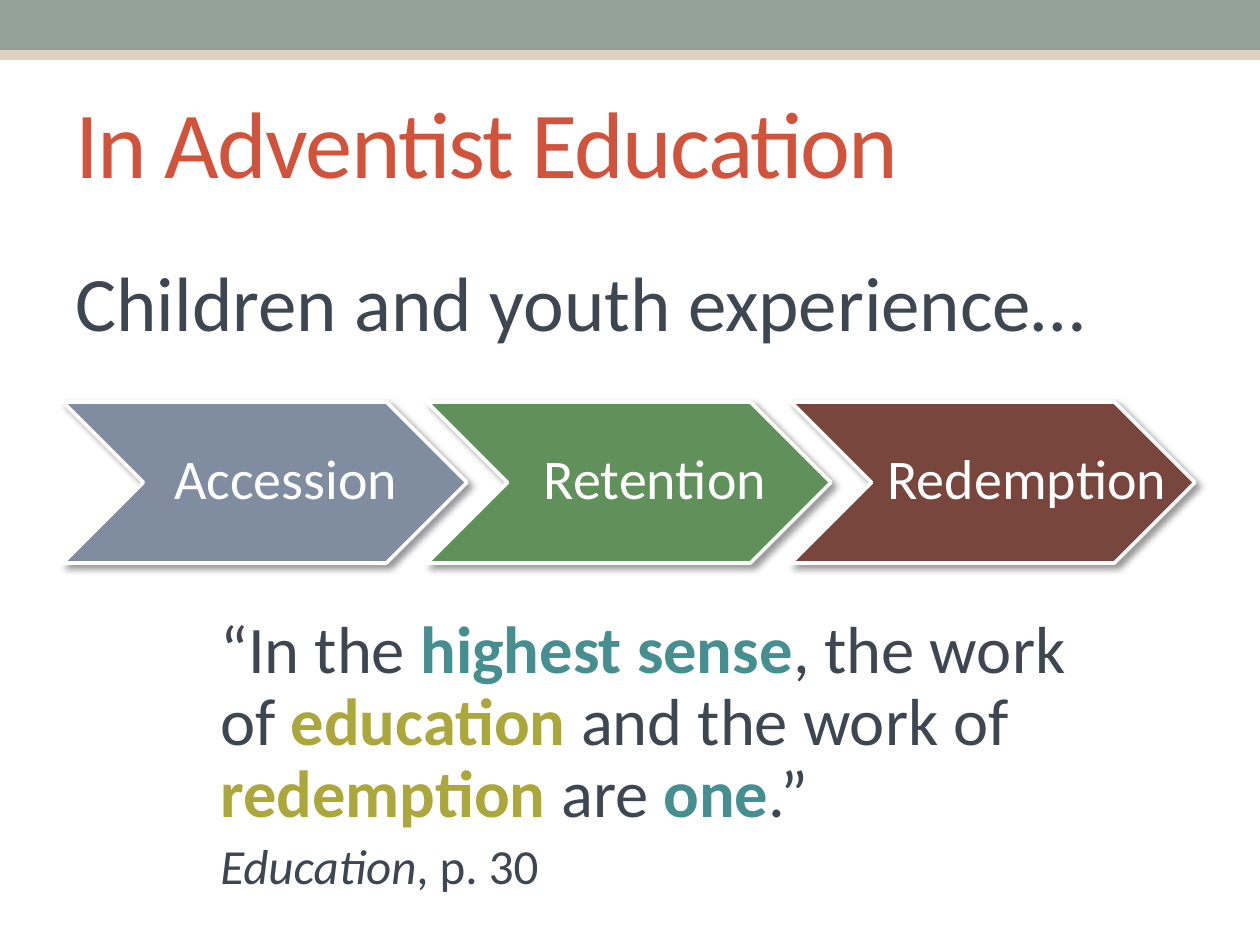
from lxml import etree
from pptx import Presentation
from pptx import util as u
from pptx.dml.color import RGBColor
from pptx.enum import shapes, text
from pptx.oxml.ns import qn

PX = u.Inches(1) / 126
FONT = "Calibri"

WHITE = RGBColor(0xFF, 0xFF, 0xFF)
BLACK = RGBColor(0, 0, 0)
SAGE = RGBColor(0x93, 0xA2, 0x99)
SAND = RGBColor(0xDE, 0xD2, 0xC2)
ORANGE = RGBColor(0xD2, 0x53, 0x3C)
SLATE = RGBColor(0x3E, 0x46, 0x52)
TEAL = RGBColor(0x45, 0x8F, 0x91)
OLIVE = RGBColor(0xAC, 0xA7, 0x3B)
BLUE_GREY = RGBColor(0x80, 0x8D, 0xA0)
GREEN = RGBColor(0x61, 0x91, 0x5A)
BROWN = RGBColor(0x79, 0x46, 0x3D)


def px(*lengths):
    return [u.Emu(round(length * PX)) for length in lengths]


def add_text(paragraph, words, size, color=SLATE, bold=False, italic=False, spacing=None):
    """Append words to a paragraph; a newline becomes a line break."""
    for index, line in enumerate(words.split("\n")):
        if index:
            paragraph.add_line_break()
        run = paragraph.add_run()
        run.text = line
        font = run.font
        font.name, font.size, font.color.rgb = FONT, u.Pt(size), color
        font.bold, font.italic = bold, italic
        if spacing is not None:
            run.font._element.set("spc", str(round(spacing * 100)))


class Deck:
    def __init__(self, width, height):
        self.presentation = Presentation()
        self.presentation.slide_width, self.presentation.slide_height = px(width, height)
        self.slide = self.presentation.slides.add_slide(self.presentation.slide_layouts[6])

    def shape(self, kind, box, fill):
        shape = self.slide.shapes.add_shape(kind, *px(*box))
        shape.shadow.inherit = False
        shape.fill.solid()
        shape.fill.fore_color.rgb = fill
        shape.line.fill.background()
        return shape

    def bar(self, box, fill):
        return self.shape(shapes.MSO_SHAPE.RECTANGLE, box, fill)

    def chevron(self, box, fill):
        shape = self.shape(shapes.MSO_SHAPE.CHEVRON, box, fill)
        shape.line.color.rgb = WHITE
        shape.line.width = u.Pt(2.08)
        effects = shape._element.spPr.find(qn("a:effectLst"))
        shadow = etree.SubElement(effects, qn("a:outerShdw"), blurRad=str(u.Pt(4)),
                                  dist=str(u.Pt(3)), dir="2700000", rotWithShape="0")
        color = etree.SubElement(shadow, qn("a:srgbClr"), val=str(BLACK))
        etree.SubElement(color, qn("a:alpha"), val="40000")
        return shape

    def text_box(self, box, paragraphs, align=None, anchor=text.MSO_ANCHOR.TOP,
                 wrap=True, line_spacing=None, space_before=()):
        """Each paragraph is a list of (words, format) pairs."""
        frame = self.slide.shapes.add_textbox(*px(*box)).text_frame
        frame.word_wrap = wrap
        frame.vertical_anchor = anchor
        for index, runs in enumerate(paragraphs):
            paragraph = frame.add_paragraph() if index else frame.paragraphs[0]
            paragraph.alignment = align
            paragraph.line_spacing = line_spacing
            if index < len(space_before):
                paragraph.space_before = u.Pt(space_before[index])
            for words, style in runs:
                add_text(paragraph, words, **style)


def main():
    deck = Deck(1260, 945)

    # Header bars
    deck.bar((0, 10, 1260, 50), SAND)
    deck.bar((0, 0, 1260, 50), SAGE)

    # Title and lead-in
    deck.text_box((63, 73, 1134, 136),
                  [[("In Adventist Education", dict(size=54, color=ORANGE, spacing=-1))]],
                  anchor=text.MSO_ANCHOR.MIDDLE)
    deck.text_box((63, 248, 1046, 106),
                  [[("Children and youth experience…", dict(size=44))]],
                  wrap=False, space_before=[18])

    # Chevron steps, then their labels on top
    steps = [("Accession", BLUE_GREY, 139, 294),
             ("Retention", GREEN, 508, 294),
             ("Redemption", BROWN, 867, 320)]
    for index, (_, fill, _, _) in enumerate(steps):
        deck.chevron((63 + 364 * index, 402, 404, 161), fill)
    for label, _, left, width in steps:
        deck.text_box((left, 437, width, 81), [[(label, dict(size=32, color=WHITE))]],
                      align=text.PP_ALIGN.CENTER)

    # Quotation and its reference
    plain = dict(size=38)
    teal = dict(size=38, color=TEAL, bold=True)
    olive = dict(size=38, color=OLIVE, bold=True)
    quote = [("“In the ", plain), ("highest sense", teal), (", the work \nof ", plain),
             ("education ", olive), ("and the work of ", plain), ("redemption ", olive),
             ("are ", plain), ("one", teal), (".”", plain)]
    reference = [("Education", dict(size=28, italic=True)), (", p. 30", dict(size=28))]
    deck.text_box((208, 610, 907, 295), [quote, reference],
                  line_spacing=0.9, space_before=[0, 6])

    deck.presentation.save("out.pptx")


if __name__ == "__main__":
    main()
